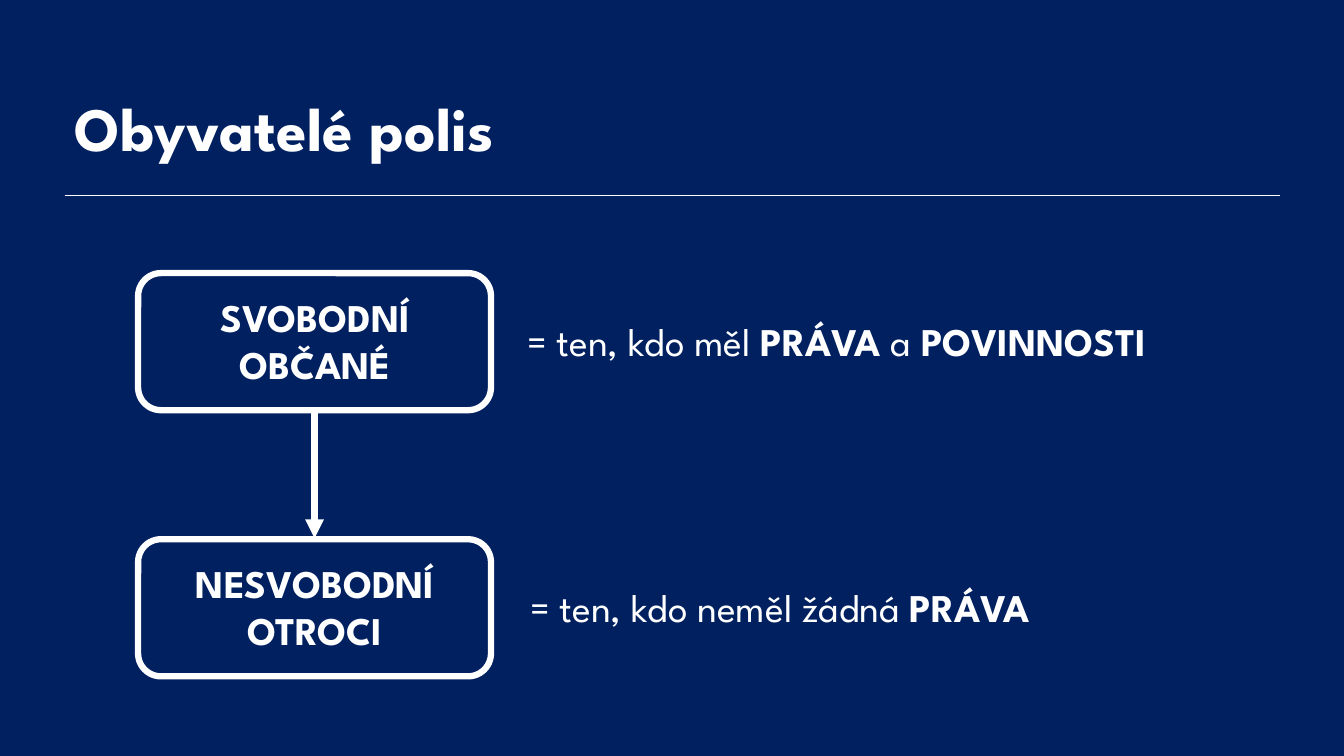
import pptx
import pptx.dml.color
import pptx.enum.shapes
import pptx.enum.text
import pptx.oxml
import pptx.oxml.ns
import pptx.util
from pptx.util import Inches

WHITE = "FFFFFF"
NAVY = "002060"


def color(value):
    return pptx.dml.color.RGBColor.from_string(value)


class Slide:
    font = "League Spartan"

    def __init__(self, deck):
        self.page = deck.slides.add_slide(deck.slide_layouts[5])
        fill = self.page.background.fill
        fill.solid()
        fill.fore_color.rgb = color(NAVY)

    def format_span(self, span, size, bold):
        span.font.name = self.font
        span.font.size = pptx.util.Pt(size)
        span.font.bold = bold
        span.font.color.rgb = color(WHITE)

    def title(self, text, left, top, width, height):
        box = self.page.shapes.title
        box.left, box.top = Inches(left), Inches(top)
        box.width, box.height = Inches(width), Inches(height)
        frame = box.text_frame
        frame.text = text
        frame.word_wrap = True
        frame.auto_size = pptx.enum.text.MSO_AUTO_SIZE.NONE
        frame.vertical_anchor = pptx.enum.text.MSO_ANCHOR.TOP
        para = frame.paragraphs[0]
        para.alignment = pptx.enum.text.PP_ALIGN.LEFT
        para.line_spacing = 0.9
        self.format_span(para.runs[0], 44, True)

    def text(self, spans, left, top, width, height, align="LEFT"):
        """Spans are pairs of wording and boldness."""
        box = self.page.shapes.add_textbox(
            Inches(left), Inches(top), Inches(width), Inches(height))
        frame = box.text_frame
        frame.word_wrap = True
        frame.auto_size = pptx.enum.text.MSO_AUTO_SIZE.SHAPE_TO_FIT_TEXT
        para = frame.paragraphs[0]
        para.alignment = pptx.enum.text.PP_ALIGN[align]
        for wording, bold in spans:
            span = para.add_run()
            span.text = wording
            self.format_span(span, 28, bold)

    def outline(self, left, top, width, height):
        shape = self.page.shapes.add_shape(
            pptx.enum.shapes.MSO_SHAPE.ROUNDED_RECTANGLE,
            Inches(left), Inches(top), Inches(width), Inches(height))
        shape.shadow.inherit = False
        shape.fill.background()
        shape.line.color.rgb = color(WHITE)
        shape.line.width = pptx.util.Pt(4.5)

    def line(self, x1, y1, x2, y2, width, arrow=False):
        connector = self.page.shapes.add_connector(
            pptx.enum.shapes.MSO_CONNECTOR.STRAIGHT,
            Inches(x1), Inches(y1), Inches(x2), Inches(y2))
        connector.line.color.rgb = color(WHITE)
        connector.line.width = pptx.util.Pt(width)
        if arrow:
            head = pptx.oxml.parse_xml(
                f'<a:tailEnd {pptx.oxml.ns.nsdecls("a")} type="triangle"/>')
            connector.line._get_or_add_ln().append(head)
        connector._element.spPr.append(pptx.oxml.parse_xml(
            f'<a:effectLst {pptx.oxml.ns.nsdecls("a")}/>'))


def main():
    deck = pptx.Presentation()
    deck.slide_width, deck.slide_height = Inches(13.33), Inches(7.5)
    slide = Slide(deck)

    # Heading and rule
    slide.title("Obyvatelé polis", 0.64, 0.93, 11.5, 0.99)
    slide.line(0.64, 1.94, 12.7, 1.94, 0.5)

    # Population groups with their definitions
    groups = [
        (2.71, "SVOBODNÍ OBČANÉ", 5.13,
         [("= ten, kdo měl ", False), ("PRÁVA", True),
          (" a ", False), ("POVINNOSTI", True)]),
        (5.35, "NESVOBODNÍ OTROCI", 5.16,
         [("= ten, kdo neměl žádná ", False), ("PRÁVA", True)]),
    ]
    for top, name, definition_left, definition in groups:
        slide.outline(1.37, top, 3.5, 1.36)
        slide.text([(name, True)], 1.64, top + 0.15, 2.97, 1.04, "CENTER")
        slide.text(definition, definition_left, top + 0.39, 7.53, 0.57)

    # Arrow from citizens to slaves
    slide.line(3.12, 4.05, 3.12, 5.34, 4.5, arrow=True)

    deck.save("out.pptx")


if __name__ == "__main__":
    main()
